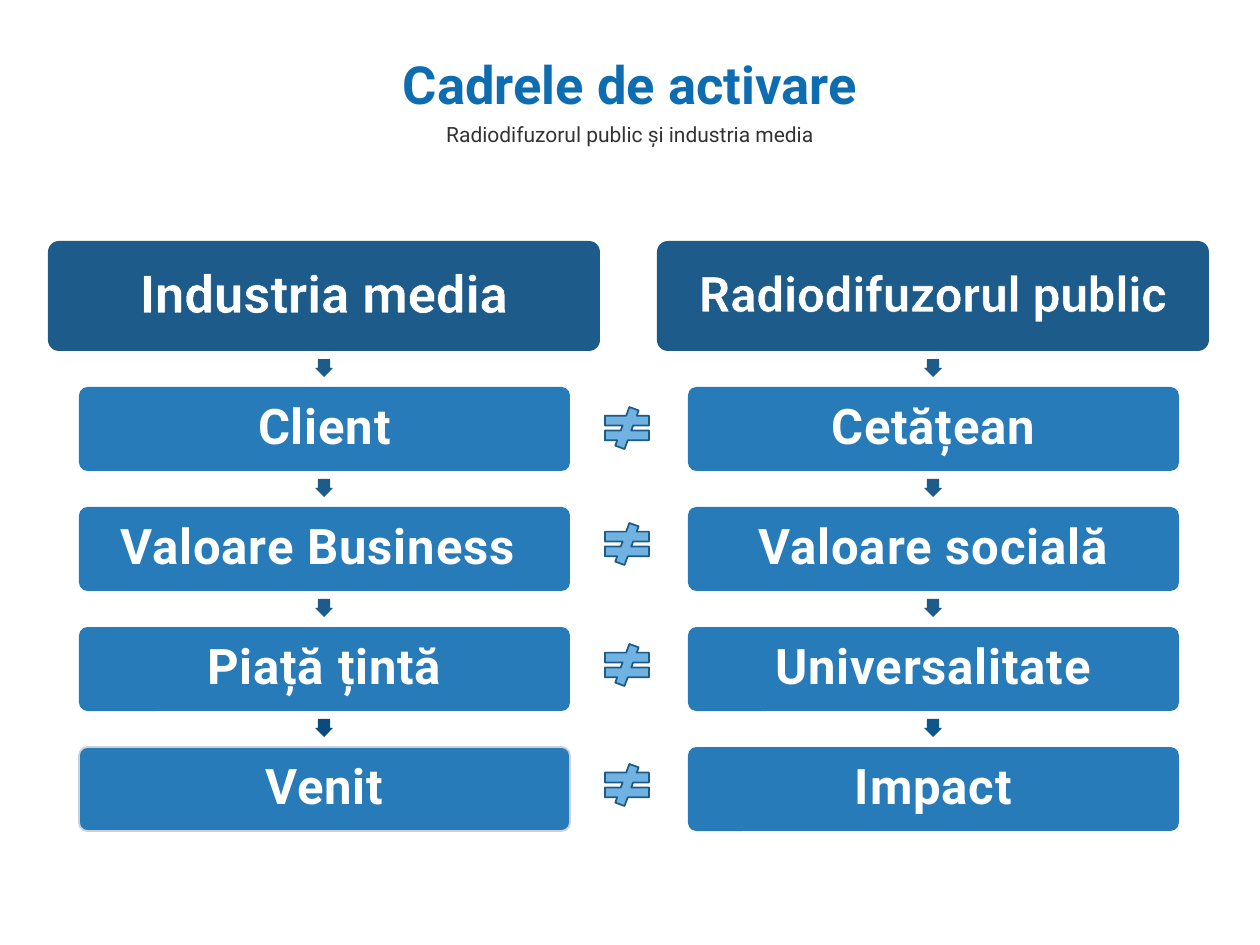
from dataclasses import dataclass

from lxml.etree import SubElement
from pptx import Presentation
from pptx.dml.color import RGBColor
from pptx.enum.shapes import MSO_SHAPE as Preset
from pptx.enum.text import MSO_ANCHOR as Anchor, PP_ALIGN as Align
from pptx.oxml.ns import qn
from pptx.shapes.autoshape import Shape
from pptx.slide import Slide
from pptx.text.text import TextFrame
from pptx.util import Emu, Pt

COLORS = {
    "title": "0E6DB1",
    "subtitle": "333333",
    "white": "FFFFFF",
    "header": "1D5C8A",
    "header_outline": "094C7B",
    "step": "267BB8",
    "step_edge": "CCD0D7",
    "arrow": "1D5C8A",
    "last_arrow_left": "094C7B",
    "last_arrow_right": "0B578D",
    "sign": "70B2E1",
    "sign_edge": "1C5B88",
}
FONT = "Roboto"
HEADER_TOP, HEADER_WIDTH, HEADER_HEIGHT = 241, 552, 110
STEP_WIDTH, STEP_HEIGHT = 491, 84
STEP_TOPS = (387, 507, 627, 747)
ARROW_SIZE, ARROW_RISE = 18, 28
SIGN_LEFT, SIGN_WIDTH, SIGN_HEIGHT = 597, 60, 42
SIGN_TOPS = (407, 523, 644, 764)


@dataclass(frozen=True)
class Column:
    left: int
    header: str
    header_size: int
    steps: tuple[str, ...]
    last_arrow: str
    last_edge: str | None = None


COLUMNS = (
    Column(48, "Industria media", 30,
           ("Client", "Valoare Business ", "Piață țintă", "Venit"),
           "last_arrow_left", "step_edge"),
    Column(657, "Radiodifuzorul public", 28,
           ("Cetățean", "Valoare socială", "Universalitate", "Impact"),
           "last_arrow_right"),
)


def px(length: int) -> Emu:
    return Emu(round(length * 914400 / 126))


def rgb(name: str) -> RGBColor:
    return RGBColor.from_string(COLORS[name])


def write(frame: TextFrame, text: str, size: int, color: str, bold: bool) -> None:
    frame.word_wrap = True
    frame.vertical_anchor = Anchor.MIDDLE
    paragraph = frame.paragraphs[0]
    paragraph.alignment = Align.CENTER
    paragraph.add_run().text = text
    font = paragraph.font
    font.name, font.size, font.bold = FONT, Pt(size), bold
    font.color.rgb = rgb(color)


def add_heading(slide: Slide, top: int, height: int, text: str, size: int,
                color: str, bold: bool) -> None:
    box = slide.shapes.add_textbox(px(79), px(top), px(1102), px(height))
    write(box.text_frame, text, size, color, bold)
    box.text_frame.paragraphs[0].space_before = Pt(9)


def add_preset(slide: Slide, preset: Preset, left: int, top: int, width: int,
               height: int, fill: str, edge: str | None = None) -> Shape:
    shape = slide.shapes.add_shape(preset, px(left), px(top), px(width), px(height))
    shape.shadow.inherit = False
    shape.fill.solid()
    shape.fill.fore_color.rgb = rgb(fill)
    if edge:
        shape.line.color.rgb = rgb(edge)
        shape.line.width = Pt(1)
    else:
        shape.line.fill.background()
    return shape


def add_box(slide: Slide, left: int, top: int, width: int, height: int, text: str,
            size: int, fill: str, edge: str | None = None) -> Shape:
    box = add_preset(slide, Preset.ROUNDED_RECTANGLE, left, top, width, height, fill, edge)
    box.adjustments[0] = 0.1
    frame = box.text_frame
    frame.margin_left = frame.margin_right = px(5)
    frame.margin_top = frame.margin_bottom = px(5)
    write(frame, text, size, "white", True)
    frame.paragraphs[0].line_spacing = 0.9
    return box


def outline_text(box: Shape, color: str) -> None:
    properties = box.text_frame.paragraphs[0].runs[0]._r.get_or_add_rPr()
    line = SubElement(properties, qn("a:ln"), w=str(Pt(0.8)))
    fill = SubElement(line, qn("a:solidFill"))
    SubElement(fill, qn("a:srgbClr"), val=COLORS[color])


def space_letters(box: Shape, points: float) -> None:
    run = box.text_frame.paragraphs[0].runs[0]
    run._r.get_or_add_rPr().set("spc", str(round(points * 100)))


def add_column(slide: Slide, column: Column) -> None:
    header = add_box(slide, column.left, HEADER_TOP, HEADER_WIDTH, HEADER_HEIGHT,
                     column.header, column.header_size, "header")
    outline_text(header, "header_outline")
    center = column.left + HEADER_WIDTH // 2
    for text, top in zip(column.steps, STEP_TOPS):
        is_last = top == STEP_TOPS[-1]
        arrow = add_preset(slide, Preset.RIGHT_ARROW, center - ARROW_SIZE // 2,
                           top - ARROW_RISE, ARROW_SIZE, ARROW_SIZE,
                           column.last_arrow if is_last else "arrow")
        arrow.rotation = 90
        arrow.adjustments[0] = 0.67
        step = add_box(slide, center - STEP_WIDTH // 2, top, STEP_WIDTH, STEP_HEIGHT,
                       text, 28, "step", column.last_edge if is_last else None)
        space_letters(step, 0.5)


def main() -> None:
    presentation = Presentation()
    presentation.slide_width, presentation.slide_height = px(1260), px(945)
    slide = presentation.slides.add_slide(presentation.slide_layouts[6])
    add_heading(slide, 48, 71, "Cadrele de activare", 30, "title", True)
    add_heading(slide, 113, 43, "Radiodifuzorul public și industria media", 12,
                "subtitle", False)
    for column in COLUMNS:
        add_column(slide, column)
    for top in SIGN_TOPS:
        add_preset(slide, Preset.MATH_NOT_EQUAL, SIGN_LEFT, top, SIGN_WIDTH,
                   SIGN_HEIGHT, "sign", "sign_edge")
    presentation.save("out.pptx")


if __name__ == "__main__":
    main()
